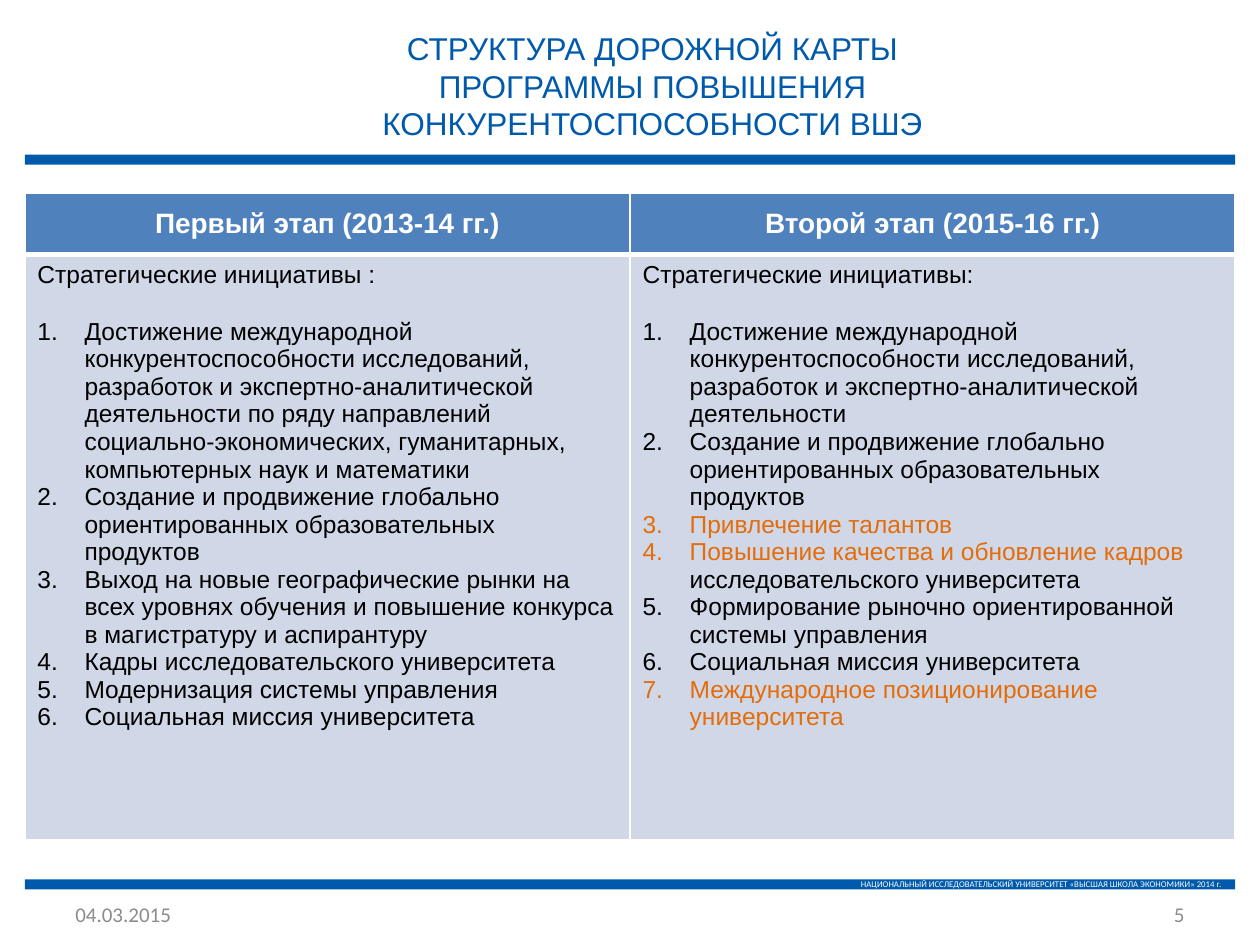
from dataclasses import dataclass

from lxml import etree
from pptx import Presentation
from pptx.dml.color import RGBColor
from pptx.enum.shapes import MSO_SHAPE
from pptx.enum.text import MSO_ANCHOR, PP_ALIGN
from pptx.oxml.ns import qn
from pptx.util import Cm, Length, Pt

RECTANGLE = MSO_SHAPE.RECTANGLE
TOP, MIDDLE = MSO_ANCHOR.TOP, MSO_ANCHOR.MIDDLE
LEFT, CENTER, RIGHT = PP_ALIGN.LEFT, PP_ALIGN.CENTER, PP_ALIGN.RIGHT


@dataclass(frozen=True)
class Theme:
    brand: str = "005AAB"
    header: str = "4F81BD"
    body: str = "D0D8E8"
    accent: str = "E46C0A"
    black: str = "000000"
    white: str = "FFFFFF"
    grey: str = "8C8C8C"
    font: str = "Arial"
    footer_font: str = "Calibri"
    title_size: int = 18
    header_size: int = 16
    body_size: int = 14
    footer_size: int = 12
    bar_size: int = 5


@dataclass(frozen=True)
class Initiative:
    text: str = ""
    highlight: str = ""


@dataclass(frozen=True)
class Stage:
    name: str
    intro: str
    initiatives: tuple[Initiative, ...]


T = Theme()
MARGIN, CONTENT_WIDTH = Cm(0.5), Cm(24.4)
NUMBER_INDENT = Cm(0.95)

RESEARCH = ("Достижение международной конкурентоспособности исследований, "
            "разработок и экспертно-аналитической деятельности")
PRODUCTS = Initiative("Создание и продвижение глобально ориентированных образовательных продуктов")
MISSION = Initiative("Социальная миссия университета")

STAGES = (
    Stage("Первый этап (2013-14 гг.)", "Стратегические инициативы :", (
        Initiative(RESEARCH + " по ряду направлений социально-экономических, "
                   "гуманитарных, компьютерных наук и математики"),
        PRODUCTS,
        Initiative("Выход на новые географические рынки на всех уровнях обучения "
                   "и повышение конкурса в магистратуру и аспирантуру"),
        Initiative("Кадры исследовательского университета"),
        Initiative("Модернизация системы управления"),
        MISSION,
    )),
    Stage("Второй этап (2015-16 гг.)", "Стратегические инициативы:", (
        Initiative(RESEARCH),
        PRODUCTS,
        Initiative(highlight="Привлечение талантов"),
        Initiative("исследовательского университета",
                   highlight="Повышение качества и обновление кадров "),
        Initiative("Формирование рыночно ориентированной системы управления"),
        MISSION,
        Initiative(highlight="Международное позиционирование университета"),
    )),
)


def write(p, text: str, *, size: int, color: str, font: str = T.font,
          bold: bool = False, align=LEFT) -> None:
    """Append text to a paragraph; a newline becomes a line break."""
    p.alignment = align
    for i, line in enumerate(text.split("\n")):
        if i:
            p.add_line_break()
        r = p.add_run()
        r.text = line
        r.font.size, r.font.name, r.font.bold = Pt(size), font, bold
        r.font.color.rgb = RGBColor.from_string(color)


def set_frame(tf, anchor=MIDDLE) -> None:
    tf.word_wrap = True
    tf.vertical_anchor = anchor
    tf.margin_top = tf.margin_bottom = 0


def add_text(slide, box: tuple[Length, ...], text: str, **fmt) -> None:
    tf = slide.shapes.add_textbox(*box).text_frame
    set_frame(tf)
    write(tf.paragraphs[0], text, **fmt)


def add_bar(slide, top: Length):
    sp = slide.shapes.add_shape(RECTANGLE, MARGIN, top, CONTENT_WIDTH, Cm(0.2))
    sp.shadow.inherit = False
    sp.fill.solid()
    sp.fill.fore_color.rgb = RGBColor.from_string(T.brand)
    sp.line.fill.background()
    set_frame(sp.text_frame)
    return sp


def number(p) -> None:
    """Give a paragraph an automatic number with a hanging indent."""
    pPr = p._p.get_or_add_pPr()
    pPr.set("marL", str(NUMBER_INDENT))
    pPr.set("indent", str(-NUMBER_INDENT))
    etree.SubElement(pPr, qn("a:buFont"), typeface=T.font)
    etree.SubElement(pPr, qn("a:buAutoNum"), type="arabicPeriod")


def style_cell(cell, fill: str, anchor, top: int = 1, bottom: int = 1) -> None:
    """Fill a cell and draw its white borders, widths in points."""
    tcPr = cell._tc.get_or_add_tcPr()
    for side, width in (("L", 1), ("R", 1), ("T", top), ("B", bottom)):
        ln = etree.SubElement(tcPr, qn(f"a:ln{side}"), w=str(Pt(width)))
        solid = etree.SubElement(ln, qn("a:solidFill"))
        etree.SubElement(solid, qn("a:srgbClr"), val=T.white)
    cell.fill.solid()
    cell.fill.fore_color.rgb = RGBColor.from_string(fill)
    cell.vertical_anchor = anchor


def fill_stage(table, col: int, stage: Stage) -> None:
    header, body = table.cell(0, col), table.cell(1, col)
    style_cell(header, T.header, MIDDLE, bottom=3)
    write(header.text_frame.paragraphs[0], stage.name, size=T.header_size,
          color=T.white, bold=True, align=CENTER)
    style_cell(body, T.body, TOP, top=3)
    tf = body.text_frame
    write(tf.paragraphs[0], stage.intro, size=T.body_size, color=T.black)
    for i, item in enumerate(stage.initiatives):
        p = tf.add_paragraph()
        number(p)
        if i == 0:
            p.space_before = Pt(17)
        for text, color in ((item.highlight, T.accent), (item.text, T.black)):
            if text:
                write(p, text, size=T.body_size, color=color)


def add_stages(slide) -> None:
    heights = (Cm(1.24), Cm(11.8))
    table = slide.shapes.add_table(len(heights), len(STAGES), MARGIN, Cm(3.89),
                                   CONTENT_WIDTH, sum(heights)).table
    table.horz_banding = False
    for row, height in zip(table.rows, heights):
        row.height = height
    for col, stage in enumerate(STAGES):
        fill_stage(table, col, stage)


def main() -> None:
    prs = Presentation()
    prs.slide_width, prs.slide_height = Cm(25.4), Cm(19.05)
    slide = prs.slides.add_slide(prs.slide_layouts[6])

    footer_bar = add_bar(slide, Cm(17.73))
    write(footer_bar.text_frame.paragraphs[0],
          "НАЦИОНАЛЬНЫЙ ИССЛЕДОВАТЕЛЬСКИЙ УНИВЕРСИТЕТ «ВЫСШАЯ ШКОЛА ЭКОНОМИКИ» 2014 г.",
          size=T.bar_size, color=T.white, font=T.footer_font, align=RIGHT)
    add_bar(slide, Cm(3.12))
    add_text(slide, (Cm(4.19), Cm(0.53), Cm(17.93), Cm(2.39)),
             "СТРУКТУРА ДОРОЖНОЙ КАРТЫ\nПРОГРАММЫ ПОВЫШЕНИЯ КОНКУРЕНТОСПОСОБНОСТИ ВШЭ",
             size=T.title_size, color=T.brand, align=CENTER)
    for left, text, align in ((Cm(1.27), "04.03.2015", LEFT), (Cm(18.21), "5", RIGHT)):
        add_text(slide, (left, Cm(18.14), Cm(5.92), Cm(0.56)), text,
                 size=T.footer_size, color=T.grey, font=T.footer_font, align=align)
    add_stages(slide)
    prs.save("out.pptx")


if __name__ == "__main__":
    main()
